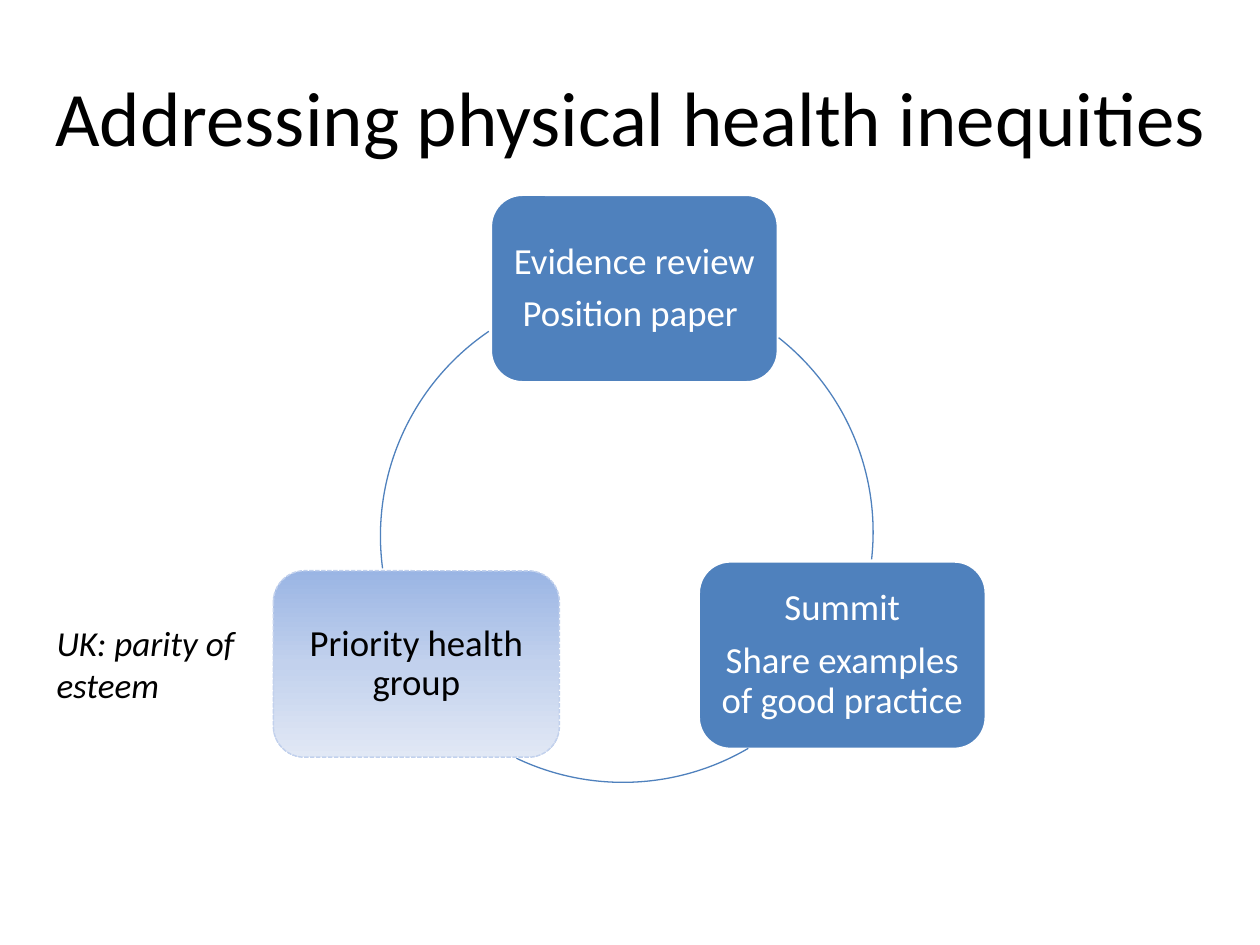
from copy import deepcopy
from dataclasses import dataclass

from pptx import Presentation
from pptx.dml.color import RGBColor
from pptx.enum.dml import MSO_LINE
from pptx.enum.shapes import MSO_SHAPE
from pptx.enum.text import MSO_ANCHOR, PP_ALIGN
from pptx.oxml.ns import qn
from pptx.util import Inches, Pt

ROUNDED, ARC = MSO_SHAPE.ROUNDED_RECTANGLE, MSO_SHAPE.ARC
MIDDLE, TOP = MSO_ANCHOR.MIDDLE, MSO_ANCHOR.TOP
LEFT, CENTER = PP_ALIGN.LEFT, PP_ALIGN.CENTER
DASHED = MSO_LINE.SQUARE_DOT


@dataclass(frozen=True)
class Theme:
    font: str = "Calibri"
    black: str = "000000"
    white: str = "FFFFFF"
    blue: str = "4F81BD"
    pale_blue: str = "C2D1ED"
    gradient: tuple = ("9AB5E4", "C2D1ED", "E1E8F5")
    title_size: float = 44
    node_size: float = 21
    note_size: float = 20
    node_line: float = 0.85
    arc_line: float = 0.75


THEME = Theme()
NODE_WIDTH, NODE_HEIGHT = 2.27, 1.48
RING_SIZE = 3.93
NODES = (
    # left, top, paragraphs, highlighted
    (3.9, 1.55, ("Evidence review", "Position paper "), False),
    (5.55, 4.46, ("Summit", "Share examples of good practice"), False),
    (2.17, 4.53, ("Priority health group",), True),
)
ARCS = (
    # left, top, start and end in degrees clockwise from three o'clock
    (3, 2.26, 308.2, 6.3),
    (2.98, 2.28, 59.6, 115.5),
    (3.02, 2.29, 172.5, 235.8),
)


def set_attributes(target, values):
    for name, value in values.items():
        setattr(target, name, value)


def place(shape, left, top, width, height):
    set_attributes(shape, {"left": Inches(left), "top": Inches(top),
                           "width": Inches(width), "height": Inches(height)})


def write_text(shape, paragraphs, size, color, insets, anchor=MIDDLE,
               alignment=LEFT, italic=False, spacing=None):
    """Fill a shape with text; insets run left, top, right, bottom."""
    frame = shape.text_frame
    sides = ("margin_left", "margin_top", "margin_right", "margin_bottom")
    set_attributes(frame, dict(zip(sides, map(Inches, insets))))
    set_attributes(frame, {"word_wrap": True, "vertical_anchor": anchor})
    frame.text = "\n".join(paragraphs)
    for paragraph in frame.paragraphs:
        set_attributes(paragraph, {"alignment": alignment, **(spacing or {})})
        set_attributes(paragraph.font, {"name": THEME.font, "size": Pt(size),
                                        "italic": italic})
        paragraph.font.color.rgb = RGBColor.from_string(color)


def set_line(shape, color, width):
    shape.line.color.rgb = RGBColor.from_string(color)
    shape.line.width = Pt(width)


def fill_gradient(shape, colors):
    """Fill from top to bottom with evenly spaced colours."""
    shape.fill.gradient()
    shape.fill.gradient_angle = 270
    stop_list = shape._element.spPr.find(".//" + qn("a:gsLst"))
    while len(stop_list) < len(colors):
        stop_list.append(deepcopy(stop_list[0]))
    for index, (stop, color) in enumerate(zip(shape.fill.gradient_stops, colors)):
        stop.position = index / (len(colors) - 1)
        stop.color.rgb = RGBColor.from_string(color)


def add_title(slide, text):
    title = slide.shapes.title
    place(title, 0.28, 0.29, 9.45, 1.25)
    write_text(title, [text], THEME.title_size, THEME.black,
               (0.16, 0.05, 0.1, 0.05))


def add_node(slide, left, top, paragraphs, highlighted):
    node = slide.shapes.add_shape(ROUNDED, 0, 0, 0, 0)
    place(node, left, top, NODE_WIDTH, NODE_HEIGHT)
    node.shadow.inherit = False
    if highlighted:
        fill_gradient(node, THEME.gradient)
        set_line(node, THEME.pale_blue, THEME.node_line)
        node.line.dash_style = DASHED
    else:
        node.fill.solid()
        node.fill.fore_color.rgb = RGBColor.from_string(THEME.blue)
        set_line(node, THEME.white, THEME.node_line)
    write_text(node, paragraphs, THEME.node_size,
               THEME.black if highlighted else THEME.white, (0.09,) * 4,
               alignment=CENTER,
               spacing={"line_spacing": 0.9,
                        "space_after": Pt(0.35 * THEME.node_size)})


def add_arc(slide, left, top, start, end):
    arc = slide.shapes.add_shape(ARC, 0, 0, 0, 0)
    place(arc, left, top, RING_SIZE, RING_SIZE)
    arc.shadow.inherit = False
    arc.fill.background()
    set_line(arc, THEME.blue, THEME.arc_line)
    for index, angle in enumerate((start, end)):
        # Adjustments count 100000ths, angles 60000ths of a degree
        arc.adjustments[index] = angle * 0.6


def add_note(slide, text):
    note = slide.shapes.add_textbox(0, 0, 0, 0)
    place(note, 0.35, 4.88, 1.81, 0.77)
    write_text(note, [text], THEME.note_size, THEME.black,
               (0.1, 0.05, 0.1, 0.05), anchor=TOP, italic=True)


def main():
    presentation = Presentation()
    presentation.slide_width = Inches(10)
    presentation.slide_height = Inches(7.5)
    slide = presentation.slides.add_slide(presentation.slide_layouts[5])
    add_title(slide, "Addressing physical health inequities")
    for node, arc in zip(NODES, ARCS):
        add_node(slide, *node)
        add_arc(slide, *arc)
    add_note(slide, "UK: parity of esteem")
    presentation.save("out.pptx")


if __name__ == "__main__":
    main()
